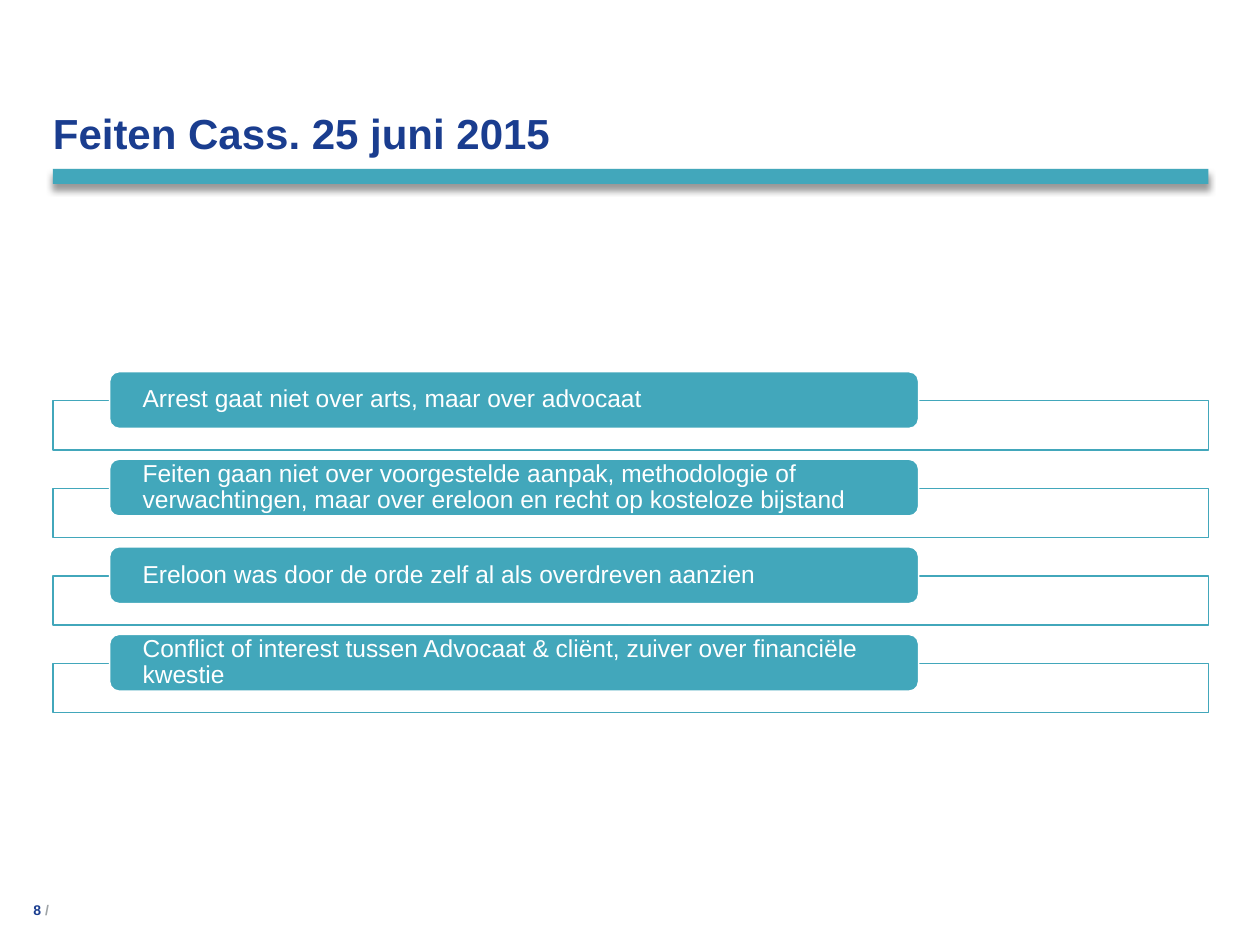
from lxml.etree import SubElement
from pptx import Presentation
from pptx.dml.color import RGBColor
from pptx.enum.shapes import MSO_SHAPE
from pptx.enum.text import MSO_ANCHOR, PP_ALIGN
from pptx.oxml import parse_xml
from pptx.oxml.ns import nsdecls, qn
from pptx.util import Inches, Pt

TEAL, NAVY, GREY, WHITE = "42A7BB", "1A3D8F", "9EA3A6", "FFFFFF"
MARGIN, WIDTH = 0.42, 9.17
TOP, PITCH = 2.95, 0.695  # first label and row step
POINTS = [
    "Arrest gaat niet over arts, maar over advocaat",
    "Feiten gaan niet over voorgestelde aanpak, methodologie of "
    "verwachtingen, maar over ereloon en recht op kosteloze bijstand",
    "Ereloon was door de orde zelf al als overdreven aanzien",
    "Conflict of interest tussen Advocaat & cliënt, zuiver over financiële kwestie",
]

prs = Presentation()
prs.slide_width, prs.slide_height = Inches(10), Inches(7.5)
s = prs.slides.add_slide(prs.slide_layouts[6])


def add_box(kind, left, top, width, height, fill=None, line=None):
    """Add a shape, or a text box when kind is None, without text insets."""
    at = [Inches(v) for v in (left, top, width, height)]
    if kind is None:
        sp = s.shapes.add_textbox(*at)
    else:
        sp = s.shapes.add_shape(kind, *at)
        sp.shadow.inherit = False
        sp.fill.solid()
        sp.fill.fore_color.rgb = RGBColor.from_string(fill)
        if line:
            sp.line.color.rgb = RGBColor.from_string(line)
            sp.line.width = Pt(0.85)
        else:
            sp.line.fill.background()
    tf = sp.text_frame
    tf.word_wrap = True
    tf.margin_left = tf.margin_right = tf.margin_top = tf.margin_bottom = 0
    return sp


def add_run(p, text, size, color, bold=False):
    r = p.add_run()
    r.text = text
    r.font.name, r.font.size, r.font.bold = "Arial", Pt(size), bold
    r.font.color.rgb = RGBColor.from_string(color)


# Rule under the title, with a soft shadow
rule = add_box(MSO_SHAPE.RECTANGLE, MARGIN, 1.34, WIDTH, 0.12, TEAL)
rule.element.spPr.find(qn("a:effectLst")).append(parse_xml(
    f'<a:outerShdw {nsdecls("a")} blurRad="{Pt(4)}" dist="{Pt(3)}" dir="5400000" '
    'rotWithShape="0"><a:srgbClr val="000000"><a:alpha val="40000"/></a:srgbClr>'
    '</a:outerShdw>'))

# Page number
tf = add_box(None, 0, 7.1, MARGIN, 0.19).text_frame
tf.vertical_anchor = MSO_ANCHOR.BOTTOM
p = tf.paragraphs[0]
p.alignment = PP_ALIGN.RIGHT
add_run(p, "8", 8, NAVY, True)
add_run(p, " / ", 8, GREY, True)

# One outlined frame and one label per point
for row, point in enumerate(POINTS):
    top = TOP + row * PITCH
    frame = add_box(MSO_SHAPE.RECTANGLE, MARGIN, top + 0.23, WIDTH, 0.39, WHITE, TEAL)
    color = frame.element.spPr.find(qn("a:solidFill"))[0]
    SubElement(color, qn("a:alpha"), val="90000")

    label = add_box(MSO_SHAPE.ROUNDED_RECTANGLE, 0.87, top, 6.42, 0.45, TEAL, WHITE)
    tf = label.text_frame
    tf.margin_left = tf.margin_right = Inches(0.24)
    tf.vertical_anchor = MSO_ANCHOR.MIDDLE
    p = tf.paragraphs[0]
    p.alignment = PP_ALIGN.LEFT
    p.line_spacing = 0.9
    add_run(p, point, 14, WHITE)

# Title
tf = add_box(None, MARGIN, 0.21, WIDTH, 1.04).text_frame
tf.vertical_anchor = MSO_ANCHOR.BOTTOM
add_run(tf.paragraphs[0], "Feiten Cass. 25 juni 2015", 24, NAVY, True)

prs.save("out.pptx")
